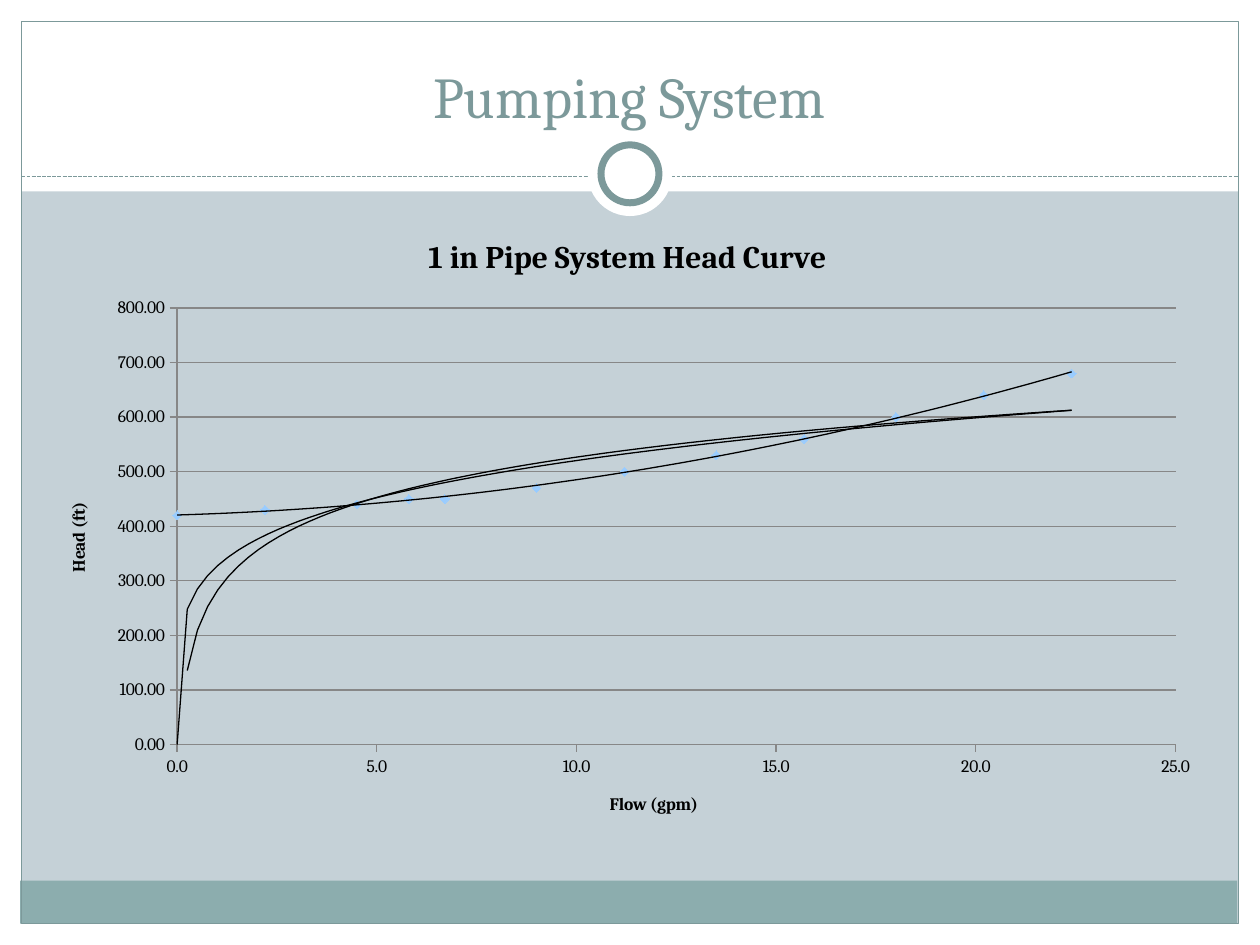
from lxml import etree
from pptx import Presentation
from pptx.chart.data import XyChartData
from pptx.dml.color import RGBColor
from pptx.enum.chart import XL_CHART_TYPE as ChartType, XL_MARKER_STYLE as Marker
from pptx.enum.chart import XL_TICK_MARK as Tick
from pptx.enum.dml import MSO_LINE
from pptx.enum.shapes import MSO_CONNECTOR, MSO_SHAPE as Shape
from pptx.enum.text import MSO_ANCHOR, PP_ALIGN
from pptx.oxml import parse_xml
from pptx.oxml.ns import nsdecls, qn
from pptx.util import Inches, Pt

FONT = "Cambria"
WHITE, TEAL, BLACK, GRAY = "FFFFFF", "7C999A", "000000", "878787"
color = RGBColor.from_string

prs = Presentation()
prs.slide_width, prs.slide_height = Inches(10), Inches(7.5)
W, H = 10, 7.5
EDGE = 0.17
slide = prs.slides.add_slide(prs.slide_layouts[5])
slide.background.fill.solid()
slide.background.fill.fore_color.rgb = color("C5D1D7")


def add_panel(kind, box, fill=None, line=None, width=0.75):
    panel = slide.shapes.add_shape(kind, *map(Inches, box))
    panel.shadow.inherit = False
    if fill:
        panel.fill.solid()
        panel.fill.fore_color.rgb = color(fill)
    else:
        panel.fill.background()
    if line:
        panel.line.color.rgb = color(line)
        panel.line.width = Pt(width)
    else:
        panel.line.fill.background()


# Frame: white margins, footer band and outline
for margin in [(0, H - EDGE, W, EDGE), (0, 0, W, 1.52),
               (0, 0, EDGE, H), (W - EDGE, 0, EDGE, H)]:
    add_panel(Shape.RECTANGLE, margin, WHITE)
add_panel(Shape.RECTANGLE, (0.16, 6.99, W - 2 * EDGE, 0.34), "8CADAE")
add_panel(Shape.RECTANGLE, (EDGE, EDGE, W - 2 * EDGE, H - 2 * EDGE), line=TEAL)

# Dashed divider with a ring in the middle
divider = slide.shapes.add_connector(
    MSO_CONNECTOR.STRAIGHT, Inches(EDGE), Inches(1.4), Inches(W - EDGE), Inches(1.4))
divider.line.color.rgb = color(TEAL)
divider.line.width = Pt(0.75)
divider.line.dash_style = MSO_LINE.SQUARE_DOT
etree.SubElement(divider._element.spPr, qn("a:effectLst"))
for size, line in [(0.67, None), (0.46, TEAL)]:
    add_panel(Shape.OVAL, ((W - size) / 2, 1.38 - size / 2, size, size), WHITE, line, 4)

# Title, brought in front of the frame
title = slide.shapes.title
slide.shapes._spTree.append(title._element)
title.left, title.top, title.width, title.height = map(Inches, (0.33, 0.25, 9.33, 0.83))
title.text_frame.vertical_anchor = MSO_ANCHOR.BOTTOM
heading = title.text_frame.paragraphs[0]
heading.alignment = PP_ALIGN.CENTER
heading_run = heading.add_run()
heading_run.text = "Pumping System"
heading_run.font.size, heading_run.font.name = Pt(33), FONT
heading_run.font.color.rgb = color(TEAL)

# System head curve
flows = [0, 2.2, 4.5, 5.8, 6.7, 9, 11.2, 13.5, 15.7, 18, 20.2, 22.4]
heads = [420, 430, 440, 450, 450, 470, 500, 530, 560, 600, 640, 680]
data = XyChartData()
head_points = data.add_series("Series 1")
for flow, head in zip(flows, heads):
    head_points.add_data_point(flow, head)
chart = slide.shapes.add_chart(
    ChartType.XY_SCATTER, *map(Inches, (0.33, 1.67, 9.3, 5)), data).chart
chart.has_legend = False
chart.font.size, chart.font.name = Pt(10), FONT
chart.font.color.rgb = color(BLACK)

# Points
chart.plots[0].vary_by_categories = False
curve = chart.plots[0].series[0]
curve.format.line.fill.background()
curve.marker.style, curve.marker.size = Marker.DIAMOND, 5
curve.marker.format.fill.solid()
curve.marker.format.fill.fore_color.rgb = color("99CCFF")
curve.marker.format.line.color.rgb = color("99CCFF")

# Fitted curves
x_values = curve._element.find(qn("c:xVal"))
for fit in ["log", "power", "poly"]:
    order = '<c:order val="2"/>' if fit == "poly" else ""
    x_values.addprevious(parse_xml(
        f'<c:trendline {nsdecls("c", "a")}><c:spPr><a:ln w="{Pt(0.75)}"><a:solidFill>'
        f'<a:srgbClr val="{BLACK}"/></a:solidFill></a:ln></c:spPr>'
        f'<c:trendlineType val="{fit}"/>{order}'
        '<c:dispRSqr val="0"/><c:dispEq val="0"/></c:trendline>'))

# Axes
flow_axis, head_axis = chart.category_axis, chart.value_axis
for axis, top, step, digits in [(flow_axis, 25, 5, "0.0"), (head_axis, 800, 100, "0.00")]:
    axis.minimum_scale, axis.maximum_scale, axis.major_unit = 0, top, step
    axis.major_tick_mark, axis.minor_tick_mark = Tick.OUTSIDE, Tick.NONE
    axis.tick_labels.number_format = digits
    axis.tick_labels.number_format_is_linked = False
    axis.format.line.color.rgb = color(GRAY)
    axis.format.line.width = Pt(0.75)
flow_axis.has_major_gridlines = False
head_axis.has_major_gridlines = True
head_axis.major_gridlines.format.line.color.rgb = color(GRAY)
head_axis.major_gridlines.format.line.width = Pt(0.75)

# Chart and axis titles
for owner, caption, size in [(chart, "1 in Pipe System Head Curve", 18),
                             (flow_axis, "Flow (gpm)", 10),
                             (head_axis, "Head (ft)", 10)]:
    owner.has_title = True
    label = owner.chart_title if owner is chart else owner.axis_title
    run = label.text_frame.paragraphs[0].add_run()
    run.text = caption
    run.font.size, run.font.name, run.font.bold = Pt(size), FONT, True
    run.font.color.rgb = color(BLACK)
chart.chart_title.include_in_layout = False
head_axis.axis_title.text_frame._txBody.bodyPr.set("rot", "-5400000")

prs.save("out.pptx")
